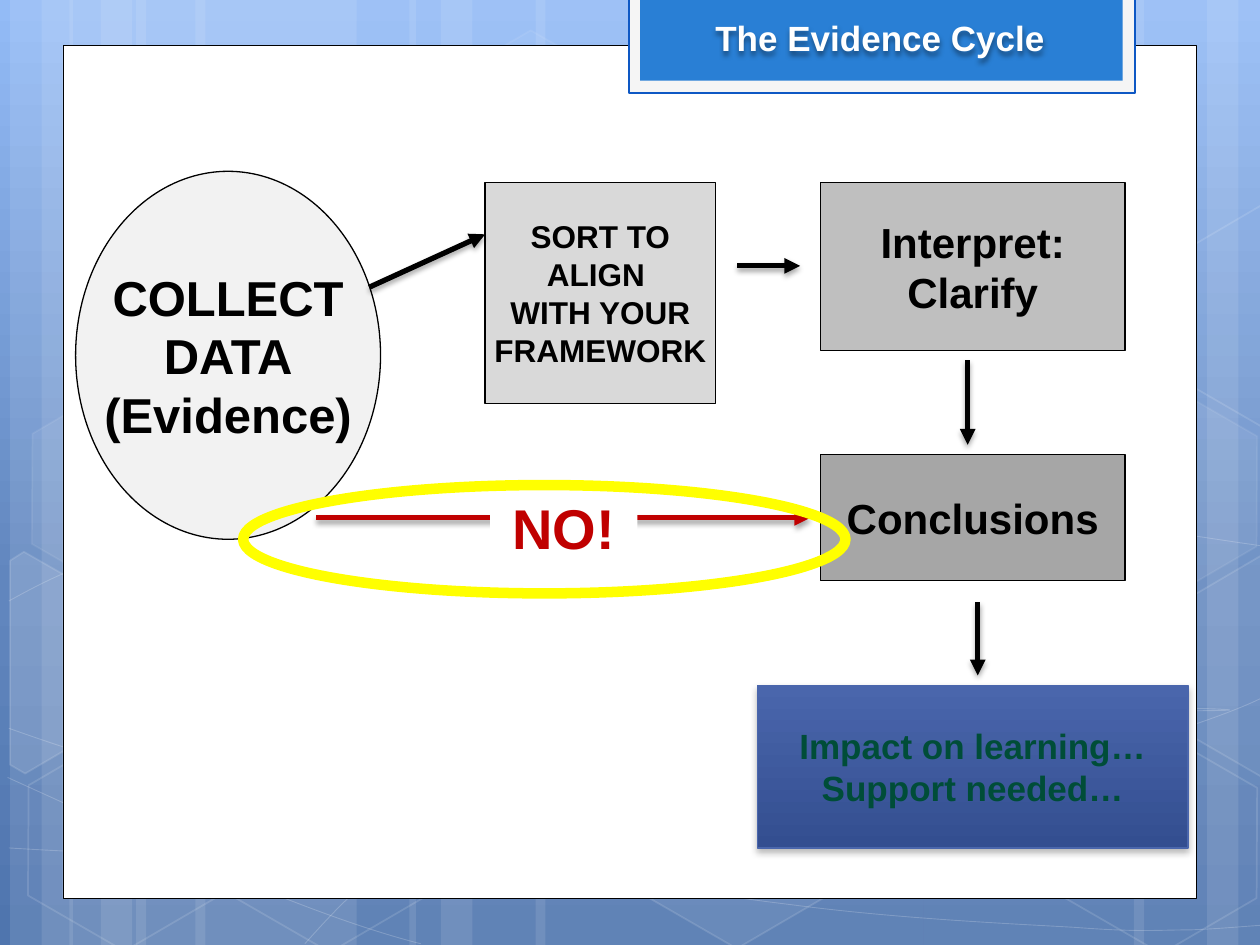
from lxml import etree
from pptx import Presentation
from pptx import util as u
from pptx.dml.color import RGBColor
from pptx.enum import shapes, text
from pptx.oxml.ns import qn

WIDTH, HEIGHT = 10, 7.5
BANDS = [(1.08, 1.75), (0.08, 0.5), (0.33, 0.83), (1.55, 1.75), (0.55, 0.5), (0.8, 0.83),
         (7.33, 1.75), (9.58, 0.5), (9, 0.83), (4.25, 3.08), (3.25, 0.5), (3.5, 0.83)]
CURVES = [
    [(0.07, 6.73), (0.55, 6.76), (1.15, 6.79), (1.9, 6.78), (2.65, 6.77), (3.58, 6.75),
     (4.58, 6.65), (5.58, 6.55), (7, 6.36), (7.92, 6.17), (8.83, 5.98), (9.77, 5.68), (10.07, 5.51)],
    [(0.07, 4.77), (0.36, 4.61), (0.65, 4.46), (1.21, 4.31), (1.78, 4.16), (2.59, 3.94),
     (3.47, 3.87), (4.36, 3.8), (5.44, 3.79), (6.54, 3.87), (7.64, 3.95), (9.47, 4.26), (10.07, 4.34)],
    [(0.06, 6.17), (1.27, 6.72), (2.47, 7.27), (3.34, 7.49)],
    [(0.07, 5.78), (0.38, 5.89), (0.7, 6), (1.28, 6.16), (1.86, 6.31), (2.73, 6.56),
     (3.57, 6.73), (4.4, 6.9), (5.45, 7.08), (6.28, 7.18), (7.11, 7.29), (8, 7.33),
     (8.53, 7.36), (9.05, 7.4), (9.19, 7.38), (9.45, 7.38), (9.71, 7.37), (9.89, 7.35), (10.07, 7.34)],
    [(2.42, 7.49), (2.6, 7.29), (2.78, 7.09), (3.02, 6.91), (3.26, 6.73), (3.6, 6.53),
     (3.88, 6.39), (4.16, 6.25), (4.33, 6.19), (4.7, 6.09), (5.06, 5.99), (5.73, 5.85),
     (6.08, 5.78), (6.44, 5.71), (6.49, 5.71), (6.8, 5.69), (7.11, 5.66), (7.6, 5.63),
     (7.94, 5.62), (8.29, 5.61), (8.86, 5.62), (8.86, 5.62), (9.08, 5.62), (9.31, 5.62),
     (9.53, 5.62), (9.71, 5.63), (9.88, 5.64), (10.06, 5.66)],
]
CURVES[-1].pop(21)
HEXAGONS = [(3.34, 0.36, 4, 8), (4.97, 5.89, 6, 12), (0.11, 5.91, 0, 12), (0.14, 3.12, 7, 8),
            (1.74, 5.92, 0, 12), (7.53, 4.53, 10, 12), (8.34, 5.93, 0, 12), (8.34, 3.14, 7, 8)]
CUT_HEXAGONS = [
    ([(0.08, 4.45), (0.19, 4.38), (0.96, 4.82), (0.95, 5.7), (0.2, 6.14), (0.08, 6.07)], 10),
    ([(9.26, 4.85), (10.01, 4.41), (10.09, 4.46), (10.09, 6.13), (10.02, 6.17), (9.26, 5.73)], 4),
    ([(9.26, 2.07), (10.01, 1.63), (10.1, 1.68), (10.09, 3.35), (10.02, 3.39), (9.26, 2.95)], 0),
]
STEPS = [
    ("OVAL", (0.6, 1.36, 2.42, 2.92), "F2F2F2", 28, ["COLLECT\nDATA", "(Evidence)"]),
    ("RECTANGLE", (3.85, 1.45, 1.83, 1.75), "D9D9D9", 18,
     ["SORT TO", "ALIGN ", "WITH YOUR", "FRAMEWORK"]),
    ("RECTANGLE", (6.51, 1.45, 2.42, 1.33), "BFBFBF", 24, ["Interpret:", "Clarify"]),
    ("RECTANGLE", (6.51, 3.61, 2.42, 1), "A6A6A6", 24, ["Conclusions"]),
]
ARROWS = [(2.93, 2.28, 3.85, 1.86), (5.85, 2.11, 6.35, 2.11),
          (7.68, 2.86, 7.68, 3.53), (7.76, 4.78, 7.76, 5.36)]


def inches(values):
    """Convert numbers to lengths in inches."""
    return [u.Inches(value) for value in values]


def set_alpha(parent, percent):
    """Make the solid fill directly under an element partly transparent."""
    if percent < 100:
        color = parent.find(qn("a:solidFill")).find(qn("a:srgbClr"))
        etree.SubElement(color, qn("a:alpha"), val=str(percent * 1000))


def paint(shape, fill=None, line=None, width=0.75, fill_alpha=100, line_alpha=100):
    """Set the fill and outline of a shape and remove its shadow."""
    shape.shadow.inherit = False
    properties = shape.element.spPr
    if fill and fill_alpha:
        shape.fill.solid()
        shape.fill.fore_color.rgb = RGBColor.from_string(fill)
        set_alpha(properties, fill_alpha)
    else:
        shape.fill.background()
    if line:
        shape.line.color.rgb = RGBColor.from_string(line)
        shape.line.width = u.Pt(width)
        set_alpha(properties.find(qn("a:ln")), line_alpha)
    else:
        shape.line.fill.background()


def add_shape(slide, kind, box, **style):
    """Add a painted preset shape in a box."""
    shape = slide.shapes.add_shape(getattr(shapes.MSO_SHAPE, kind), *inches(box))
    paint(shape, **style)
    return shape


def add_outline(slide, points, close, **style):
    """Add a painted freeform through the points."""
    points = [tuple(inches(point)) for point in points]
    builder = slide.shapes.build_freeform(*points[0])
    builder.add_line_segments(points[1:], close=close)
    outline = builder.convert_to_shape()
    paint(outline, **style)
    return outline


def add_curve(slide, points, **style):
    """Add a painted chain of cubic Bezier curves."""
    outline = add_outline(slide, points, False, **style)
    segments = list(outline.element.iter(qn("a:lnTo")))
    for start in range(0, len(segments), 3):
        first, *others = segments[start:start + 3]
        curve = etree.Element(qn("a:cubicBezTo"))
        first.addprevious(curve)
        for segment in (first, *others):
            curve.append(segment[0])
            segment.getparent().remove(segment)


def set_gradient(fill, owner, stops):
    """Give a fill a gradient from top to bottom."""
    fill.gradient()
    fill.gradient_angle = 270
    stop_list = next(owner.iter(qn("a:gsLst")))
    stop_list.clear()
    for position, color in stops:
        stop = etree.SubElement(stop_list, qn("a:gs"), pos=str(position * 1000))
        etree.SubElement(stop, qn("a:srgbClr"), val=color)


def set_shadow(shape, alpha, blur, distance):
    """Give a shape or connector a downward black shadow."""
    properties = shape.element.spPr
    for effects in properties.findall(qn("a:effectLst")):
        properties.remove(effects)
    effects = etree.SubElement(properties, qn("a:effectLst"))
    shadow = etree.SubElement(effects, qn("a:outerShdw"), blurRad=str(u.Pt(blur)),
                              dist=str(u.Pt(distance)), dir="5400000", rotWithShape="0")
    color = etree.SubElement(shadow, qn("a:srgbClr"), val="000000")
    etree.SubElement(color, qn("a:alpha"), val=str(alpha * 1000))


def write(shape, lines, size, color, wrap=False, anchor=text.MSO_ANCHOR.MIDDLE):
    """Write centred bold paragraphs into a shape."""
    frame = shape.text_frame
    frame.word_wrap = wrap
    frame.vertical_anchor = anchor
    for index, line in enumerate(lines):
        paragraph = frame.add_paragraph() if index else frame.paragraphs[0]
        paragraph.alignment = text.PP_ALIGN.CENTER
        for part_index, part in enumerate(line.split("\n")):
            if part_index:
                paragraph.add_line_break()
            run = paragraph.add_run()
            run.text = part
            run.font.name, run.font.size, run.font.bold = "Arial", u.Pt(size), True
            run.font.color.rgb = RGBColor.from_string(color)


def add_arrow(slide, ends, color):
    """Add a shadowed arrow between two points."""
    arrow = slide.shapes.add_connector(shapes.MSO_CONNECTOR.STRAIGHT, *inches(ends))
    arrow.line.color.rgb = RGBColor.from_string(color)
    arrow.line.width = u.Pt(3)
    etree.SubElement(arrow.element.spPr.find(qn("a:ln")), qn("a:tailEnd"), type="triangle")
    set_shadow(arrow, 35, 3.1, 1.8)


def add_backdrop(slide):
    """Draw the blue background with its bands, curves and hexagons."""
    set_gradient(slide.background.fill, slide.element,
                 [(0, "93BBF6"), (62, "6186BE"), (100, "4F75AE")])
    for left, width in BANDS:
        add_shape(slide, "RECTANGLE", (left, 0, width, HEIGHT), fill="FFFFFF", fill_alpha=10)
    for curve in CURVES:
        add_curve(slide, curve, line="FFFFFF", width=0.5, line_alpha=20)
    for left, top, fill_alpha, line_alpha in HEXAGONS:
        hexagon = add_shape(slide, "HEXAGON", (left, top, 1.75, 1.52), fill="FFFFFF", line="FFFFFF",
                            width=1, fill_alpha=fill_alpha, line_alpha=line_alpha)
        hexagon.adjustments[0] = 0.285
        hexagon.rotation = 30
    for points, fill_alpha in CUT_HEXAGONS:
        add_outline(slide, points, True, fill="FFFFFF", line="FFFFFF", width=1,
                    fill_alpha=fill_alpha, line_alpha=12)


def add_title_tab(slide, left, top, width, height):
    """Place the title on its blue tab."""
    add_shape(slide, "RECTANGLE", (left, top, width, height), fill="F5F5F5", line="0E58C4", width=1.25)
    add_shape(slide, "RECTANGLE", (left + 0.09, top - 0.02, width - 0.19, height - 0.08), fill="297FD5")
    title = slide.shapes.title
    title.left, title.top, title.width, title.height = inches((left + 0.19, top + 0.1, width - 0.41, 0.44))
    write(title, ["The Evidence Cycle"], 20, "FFFFFF", True, text.MSO_ANCHOR.TOP)
    set_shadow(title, 40, 3, 2)
    title.element.getparent().append(title.element)


def add_flow(slide):
    """Draw the steps of the cycle, the outcome and the arrows."""
    for kind, box, fill, size, lines in STEPS:
        write(add_shape(slide, kind, box, fill=fill, line="000000"), lines, size, "000000")
    outcome = add_shape(slide, "RECTANGLE", (6.01, 5.44, 3.42, 1.29), line="4A66AC")
    set_gradient(outcome.fill, outcome.element, [(0, "4A66AC"), (100, "334E90")])
    set_shadow(outcome, 28, 4, 2)
    write(outcome, ["Impact on learning…", "Support needed…"], 20, "004D38")
    for ends in ARROWS:
        add_arrow(slide, ends, "000000")


def add_warning(slide, left, top, width, height):
    """Ring the forbidden shortcut and label it."""
    add_arrow(slide, (left + 0.58, top + 0.26, left + 4.5, top + 0.26), "C00000")
    label = add_shape(slide, "RECTANGLE", (left + 1.96, top + 0.02, 1.17, 0.64), fill="FFFFFF")
    write(label, ["NO!"], 32, "C00000", True, text.MSO_ANCHOR.TOP)
    add_shape(slide, "OVAL", (left, top, width, height), line="FFFF00", width=6)


def main():
    """Build and save the slide."""
    presentation = Presentation()
    presentation.slide_width, presentation.slide_height = inches((WIDTH, HEIGHT))
    slide = presentation.slides.add_slide(presentation.slide_layouts[5])
    add_backdrop(slide)
    add_shape(slide, "RECTANGLE", (0.5, 0.36, 9, 6.77), fill="FFFFFF", line="000000", width=0.5)
    add_title_tab(slide, 4.99, -0.02, 4.02, 0.76)
    add_flow(slide)
    add_warning(slide, 1.93, 3.85, 4.78, 0.86)
    presentation.save("out.pptx")


if __name__ == "__main__":
    main()
